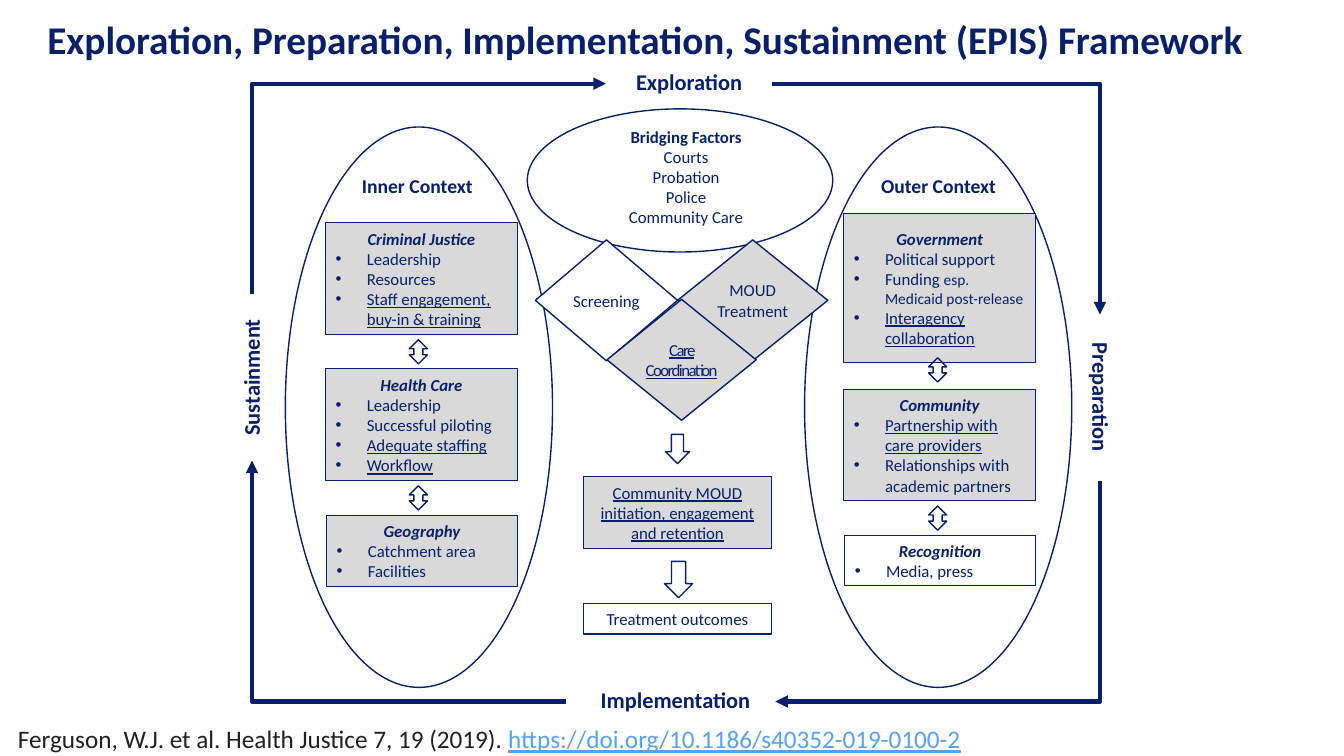
from lxml import etree
from pptx import Presentation
from pptx import util as u
from pptx.dml.color import RGBColor
from pptx.enum import shapes, text
from pptx.oxml import ns

SCALE = 9144
FACE = "Calibri"
HEX = {"navy": "08206C", "gray": "D9D9D9", "white": "FFFFFF",
       "ink": "212121", "link": "59A0F7"}
BODY = {"size": u.Pt(12)}
HEAD = {"size": u.Pt(12), "bold": True, "italic": True}
BOLD = {"size": u.Pt(12), "bold": True}
AREA = {"size": u.Pt(14), "bold": True}
PHASE = {"size": u.Pt(16), "bold": True}
TITLE = {"size": u.Pt(28), "bold": True}
CITE = {"size": u.Pt(18)}
LINE = {"underline": True}
KIND = shapes.MSO_SHAPE
ALIGN = text.PP_ALIGN
MIDDLE = text.MSO_ANCHOR.MIDDLE


def px(*vals):
    return [u.Emu(v * SCALE) for v in vals]


def rgb(name):
    return RGBColor.from_string(HEX[name])


def add_sub(parent, tag, **attrs):
    return etree.SubElement(parent, ns.qn(tag), attrs)


def set_all(item, values):
    for name, value in values.items():
        setattr(item, name, value)


def add_run(para, words, form, color="navy"):
    run = para.add_run()
    run.text = words
    set_all(run.font, {"name": FACE, **form})
    run.font.color.rgb = rgb(color)
    return run


def set_frame(frame, anchor=MIDDLE, inset=None):
    set_all(frame, {"word_wrap": True, "vertical_anchor": anchor,
                    "auto_size": text.MSO_AUTO_SIZE.NONE})
    if inset is not None:
        for side in ("left", "top", "right", "bottom"):
            setattr(frame, f"margin_{side}", inset)


def next_para(frame, align=ALIGN.CENTER, **form):
    para = frame.paragraphs[0]
    if para.runs:
        para = frame.add_paragraph()
    set_all(para, {"alignment": align, **form})
    return para


def add_item(frame, runs):
    para = next_para(frame, ALIGN.LEFT)
    props = para._p.get_or_add_pPr()
    props.set("marL", str(31 * SCALE))
    props.set("indent", str(-31 * SCALE))
    add_sub(props, "a:buFont", typeface="Arial")
    add_sub(props, "a:buChar", char="•")
    for words, form in runs:
        add_run(para, words, {**BODY, **form})


def add_label(slide, box, words, form, align=ALIGN.CENTER, turn=0, **more):
    label = slide.shapes.add_textbox(*px(*box))
    label.rotation = turn
    set_frame(label.text_frame)
    add_run(next_para(label.text_frame, align, **more), words, form)
    return label


def add_form(slide, kind, box, fill=None, weight=1):
    form = slide.shapes.add_shape(kind, *px(*box))
    form.shadow.inherit = False
    if fill:
        form.fill.solid()
        form.fill.fore_color.rgb = rgb(fill)
    else:
        form.fill.background()
    form.line.color.rgb = rgb("navy")
    form.line.width = u.Pt(weight)
    return form


def add_note(slide, kind, box, fill, words, form=BODY, inset=None, space=None):
    note = add_form(slide, kind, box, fill)
    set_frame(note.text_frame, inset=inset)
    run = add_run(next_para(note.text_frame), words, form)
    if space:
        run.font._element.set("spc", str(space))


def add_card(slide, box, fill, head, items):
    card = add_form(slide, KIND.RECTANGLE, box, fill, 0.75)
    frame = card.text_frame
    set_frame(frame)
    add_run(next_para(frame), head, HEAD)
    for runs in items:
        add_item(frame, runs)


def add_side(slide, left, head, cards, tops):
    add_form(slide, KIND.OVAL, (left, 126, 265, 556))
    add_label(slide, (left + 66, 156, 135, 57), head, AREA, ALIGN.LEFT)
    for card in cards:
        add_card(slide, *card)
    for top in tops:
        add_form(slide, KIND.UP_DOWN_ARROW, (left + 123, top, 18, 24))


def add_bend(slide, ends, tip):
    bend = slide.shapes.add_connector(shapes.MSO_CONNECTOR.ELBOW, *px(*ends))
    bend.line.color.rgb = rgb("navy")
    bend.line.width = u.Pt(3)
    props = bend._element.spPr
    props.find(ns.qn("a:prstGeom")).set("prst", "bentConnector2")
    add_sub(props.find(ns.qn("a:ln")), tip, type="triangle")
    add_sub(props, "a:effectLst")


def add_bridge(slide):
    add_form(slide, KIND.OVAL, (523, 108, 303, 142))
    box = add_label(slide, (609, 120, 143, 111), "Bridging Factors", BOLD)
    for words in ("Courts", "Probation", "Police", "Community Care"):
        add_run(next_para(box.text_frame), words, BODY)
    gem = KIND.DIAMOND
    add_note(slide, gem, (531, 238, 141, 120), "white", "Screening", inset=0)
    add_note(slide, gem, (672, 238, 149, 120), "gray", "MOUD Treatment", inset=0)
    add_note(slide, gem, (602, 297, 148, 120), "gray", "Care Coordination",
             {**BODY, **LINE}, 0, -110)


def add_flow(slide):
    for box in ((660, 431, 24, 29), (659, 557, 28, 36)):
        add_form(slide, KIND.DOWN_ARROW, box, "white")
    add_note(slide, KIND.RECTANGLE, (579, 473, 186, 71), "gray",
             "Community MOUD initiation, engagement and retention",
             {**BODY, **LINE})
    add_note(slide, KIND.RECTANGLE, (579, 599, 186, 30), "white",
             "Treatment outcomes")


def add_cycle(slide):
    for words, box, turn in (("Exploration", (601, 57, 165, 52), 0),
                             ("Preparation", (1008, 368, 165, 52), 90),
                             ("Implementation", (566, 665, 208, 62), 0),
                             ("Sustainment", (168, 342, 165, 65), 270)):
        add_label(slide, box, words, PHASE, turn=turn, line_spacing=0.9)
    for ends, tip in (((601, 83, 250, 292), "a:headEnd"),
                      ((561, 696, 250, 457), "a:tailEnd"),
                      ((766, 83, 1091, 312), "a:tailEnd"),
                      ((769, 696, 1091, 477), "a:headEnd")):
        add_bend(slide, ends, tip)


def add_title(slide, words):
    title = slide.shapes.title
    set_all(title, dict(zip(("left", "top", "width", "height"),
                            px(37, 8, 1295, 67))))
    set_frame(title.text_frame)
    para = next_para(title.text_frame, ALIGN.LEFT, line_spacing=0.9)
    add_run(para, words, TITLE)


def add_cite(slide):
    box = slide.shapes.add_textbox(*px(8, 713, 1324, 37))
    set_frame(box.text_frame, text.MSO_ANCHOR.TOP)
    para = next_para(box.text_frame, ALIGN.LEFT)
    add_run(para, "Ferguson, W.J. et al. Health Justice 7, 19 (2019). ", CITE, "ink")
    add_run(para, "https://doi.org/10.1186/s40352-019-0100-2",
            {**CITE, **LINE}, "link")


def main():
    deck = Presentation()
    deck.slide_width, deck.slide_height = px(1333, 750)
    slide = deck.slides.add_slide(deck.slide_layouts[5])
    add_title(slide, "Exploration, Preparation, Implementation, Sustainment (EPIS) Framework")
    add_side(slide, 283, "Inner Context", (
        ((323, 221, 190, 111), "gray", "Criminal Justice", (
            [("Leadership", {})], [("Resources", {})],
            [("Staff engagement, buy-in & training", LINE)])),
        ((323, 366, 190, 111), "gray", "Health Care", (
            [("Leadership", {})], [("Successful piloting", {})],
            [("Adequate staffing", LINE)], [("Workflow", LINE)])),
        ((324, 511, 189, 71), "gray", "Geography", (
            [("Catchment area", {})], [("Facilities", {})])),
    ), (337, 482))
    add_side(slide, 798, "Outer Context", (
        ((837, 212, 190, 148), "gray", "Government", (
            [("Political support", {})],
            [("Funding ", {}), ("esp. Medicaid post-release", {"size": u.Pt(11)})],
            [("Interagency collaboration", LINE)])),
        ((837, 386, 190, 111), "gray", "Community", (
            [("Partnership with care providers", LINE)],
            [("Relationships with academic partners", {})])),
        ((838, 531, 189, 50), None, "Recognition", ([("Media, press", {})],)),
    ), (355, 502))
    add_bridge(slide)
    add_flow(slide)
    add_cycle(slide)
    add_cite(slide)
    deck.save("out.pptx")


if __name__ == "__main__":
    main()
